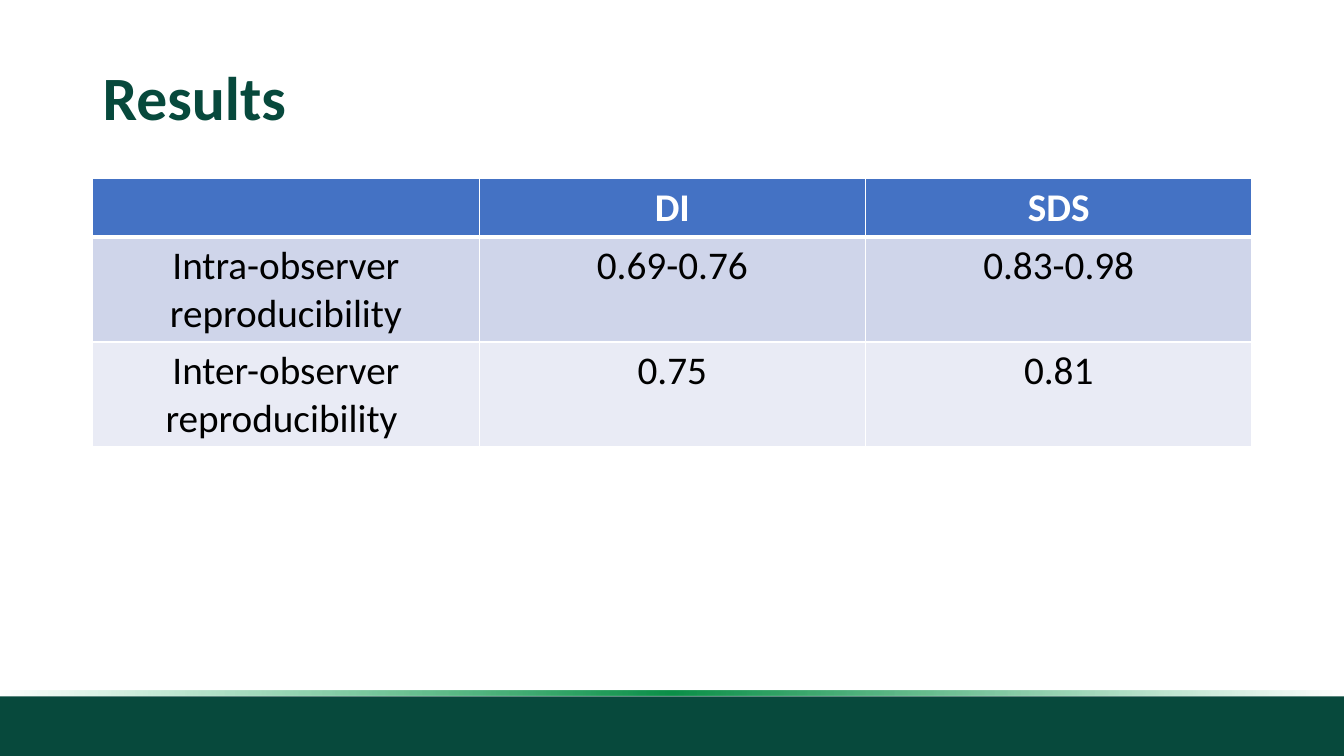
from dataclasses import dataclass

from lxml.etree import SubElement
from pptx import Presentation
from pptx.dml.color import RGBColor as RGB
from pptx.enum.shapes import MSO_SHAPE as Form
from pptx.enum.text import MSO_ANCHOR as Anchor, PP_ALIGN as Align
from pptx.oxml.ns import qn
from pptx.shapes.autoshape import Shape
from pptx.slide import Slide
from pptx.table import _Cell as Cell
from pptx.util import Inches, Pt

WIDE, HIGH = Inches(13.33), Inches(7.5)


@dataclass(frozen=True)
class Theme:
    font: str = "Calibri"
    title: int = 44
    body: int = 28
    green: str = "07493C"
    head: str = "4472C4"
    bands: tuple = ("CFD5EA", "E9EBF5")
    white: str = "FFFFFF"
    black: str = "000000"
    glow: tuple = ((0, "0D9D4F", 0), (50, "0C9049", 100), (100, "0FAB56", 0))


@dataclass(frozen=True)
class Box:
    """A place on the slide, in percent of its width and height."""
    left: float
    top: float
    width: float
    height: float

    def emu(self) -> tuple[int, int, int, int]:
        return (int(WIDE * self.left / 100), int(HIGH * self.top / 100),
                int(WIDE * self.width / 100), int(HIGH * self.height / 100))


@dataclass(frozen=True)
class Row:
    cells: tuple[str, str, str]
    share: float
    fill: str
    ink: str
    bold: bool = False
    rule: float = 1


THEME = Theme()
FOOT = Box(0, 92.1, 100, 7.9)
GLOW = Box(0, 91.3, 100, 0.75)
TITLE = Box(6.9, 5.3, 86.25, 15.9)
TABLE = Box(6.9, 23.65, 86.25, 35.5)
ROWS = (
    Row(("", "DI", "SDS"), 7.7, THEME.head, THEME.white, True, 3),
    Row(("Intra-observer reproducibility", "0.69-0.76", "0.83-0.98"),
        13.9, THEME.bands[0], THEME.black),
    Row(("Inter-observer reproducibility ", "0.75", "0.81"),
        13.9, THEME.bands[1], THEME.black),
)


def add_bar(slide: Slide, box: Box) -> Shape:
    bar = slide.shapes.add_shape(Form.RECTANGLE, *box.emu())
    bar.shadow.inherit = False
    bar.line.fill.background()
    bar.fill.solid()
    bar.fill.fore_color.rgb = RGB.from_string(THEME.green)
    return bar


def add_glow(bar: Shape) -> None:
    """Fill a bar with a gradient that fades out at both ends."""
    bar.fill.gradient()
    bar.fill.gradient_angle = 180
    stops = next(bar.element.iter(qn("a:gsLst")))
    for old in list(stops):
        stops.remove(old)
    for pos, tone, alpha in THEME.glow:
        stop = SubElement(stops, qn("a:gs"), pos=str(pos * 1000))
        color = SubElement(stop, qn("a:srgbClr"), val=tone)
        SubElement(color, qn("a:alpha"), val=str(alpha * 1000))


def add_title(slide: Slide, text: str) -> None:
    frame = slide.shapes.add_textbox(*TITLE.emu()).text_frame
    frame.word_wrap = True
    frame.vertical_anchor = Anchor.MIDDLE
    para = frame.paragraphs[0]
    para.text = text
    para.line_spacing = 0.9
    set_font(para.font, THEME.title, THEME.green, True)


def set_font(font, size: int, ink: str, bold: bool) -> None:
    font.name, font.size, font.bold = THEME.font, Pt(size), bold
    font.color.rgb = RGB.from_string(ink)


def set_edges(cell: Cell, top: float, base: float) -> None:
    """Draw white borders, before the cell gets its fill."""
    props = cell._tc.get_or_add_tcPr()
    for side, width in (("L", 1), ("R", 1), ("T", top), ("B", base)):
        edge = SubElement(props, qn(f"a:ln{side}"), w=str(Pt(width)))
        paint = SubElement(edge, qn("a:solidFill"))
        SubElement(paint, qn("a:srgbClr"), val=THEME.white)


def add_grid(slide: Slide, rows: tuple[Row, ...]) -> None:
    count = len(rows[0].cells)
    grid = slide.shapes.add_table(len(rows), count, *TABLE.emu()).table
    top = 1
    for r, row in enumerate(rows):
        grid.rows[r].height = int(HIGH * row.share / 100)
        for c, text in enumerate(row.cells):
            cell = grid.cell(r, c)
            set_edges(cell, top, row.rule)
            cell.fill.solid()
            cell.fill.fore_color.rgb = RGB.from_string(row.fill)
            para = cell.text_frame.paragraphs[0]
            para.text = text
            para.alignment = Align.CENTER
            set_font(para.font, THEME.body, row.ink, row.bold)
        top = row.rule


def main() -> None:
    deck = Presentation()
    deck.slide_width, deck.slide_height = WIDE, HIGH
    slide = deck.slides.add_slide(deck.slide_layouts[6])
    add_bar(slide, FOOT)
    add_glow(add_bar(slide, GLOW))
    add_title(slide, "Results")
    add_grid(slide, ROWS)
    deck.save("out.pptx")


if __name__ == "__main__":
    main()
